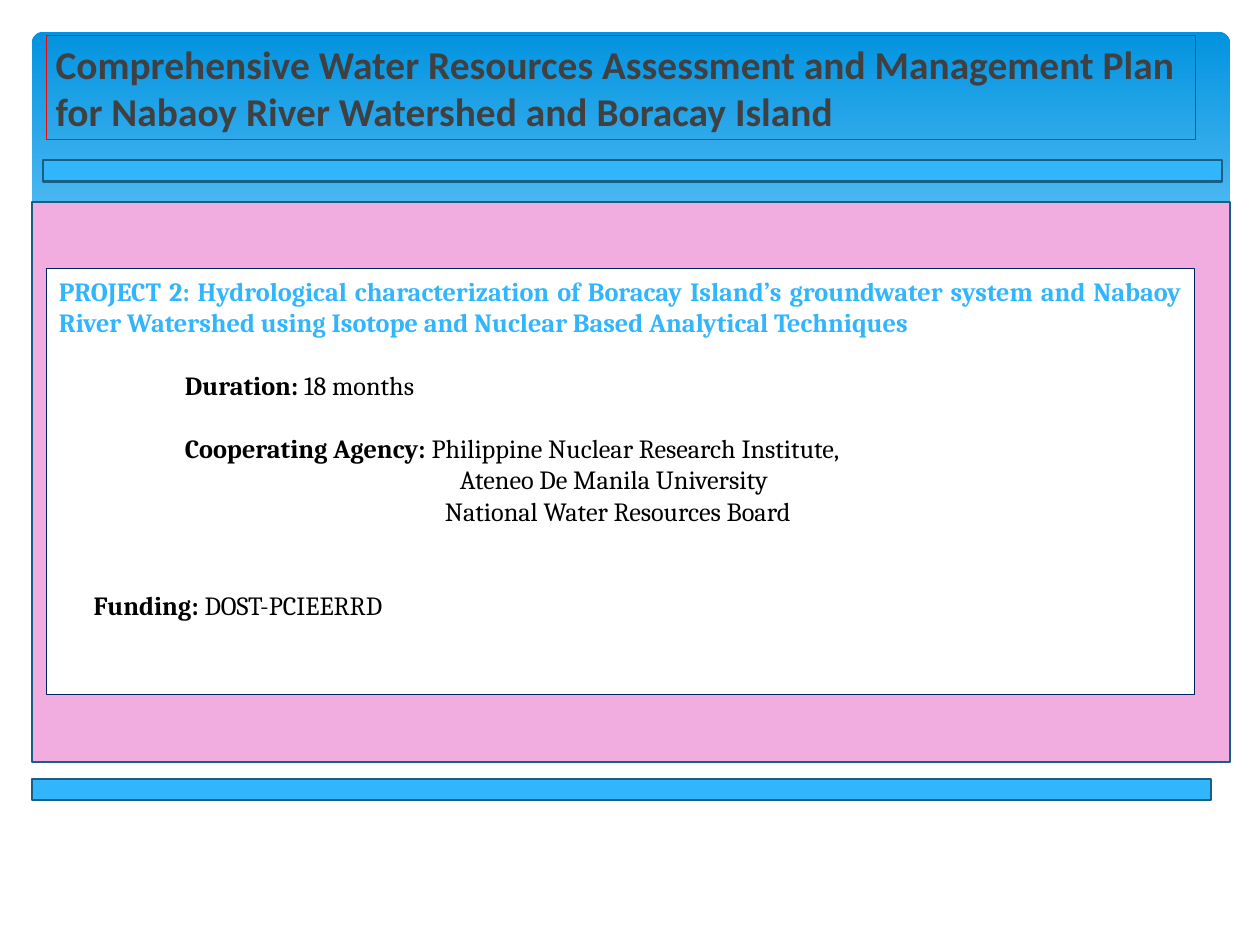
from pptx import Presentation
from pptx.dml.color import RGBColor
from pptx.enum.shapes import MSO_SHAPE
from pptx.enum.text import MSO_ANCHOR, PP_ALIGN
from pptx.util import Cm, Pt

DEEP_BLUE = RGBColor(0x02, 0x93, 0xE0)
PALE_BLUE = RGBColor(0x83, 0xD3, 0xFE)
SKY_BLUE = RGBColor(0x31, 0xB6, 0xFD)
STEEL_BLUE = RGBColor(0x19, 0x5F, 0x84)
NAVY = RGBColor(0x00, 0x20, 0x60)
PINK = RGBColor(0xF1, 0xAD, 0xDF)
RED = RGBColor(0xFF, 0x00, 0x00)
GREY = RGBColor(0x40, 0x40, 0x40)
WHITE = RGBColor(0xFF, 0xFF, 0xFF)
BLACK = RGBColor(0x00, 0x00, 0x00)

TITLE = ("Comprehensive Water Resources Assessment and Management Plan "
         "for Nabaoy River Watershed and Boracay Island")
PROJECT = ("PROJECT 2: Hydrological characterization of Boracay Island’s "
           "groundwater system and Nabaoy River Watershed using Isotope and "
           "Nuclear Based Analytical Techniques")
DETAILS = [
    (0, 0, PROJECT, "", SKY_BLUE),
    (2.54, 1, "Duration: ", "18 months", BLACK),
    (2.54, 1, "Cooperating Agency: ", "Philippine Nuclear Research Institute,", BLACK),
    (8.08, 0, "", "Ateneo De Manila University", BLACK),
    (7.78, 0, "", "National Water Resources Board", BLACK),
    (0.7, 2, "Funding: ", "DOST-PCIEERRD", BLACK),
]


class SlideBuilder:
    title_format = {"name": "Calibri", "size": Pt(22.5), "bold": True}
    detail_format = {"name": "Cambria", "size": Pt(15)}
    line_height = 17.9

    def __init__(self, slide):
        self.slide = slide

    def shape(self, kind, left, top, width, height):
        shape = self.slide.shapes.add_shape(
            kind, Cm(left), Cm(top), Cm(width), Cm(height))
        shape.shadow.inherit = False
        return shape

    def banner(self, left, top, width, height):
        banner = self.shape(MSO_SHAPE.ROUNDED_RECTANGLE, left, top, width, height)
        banner.adjustments[0] = 0.034
        banner.line.fill.background()
        banner.fill.gradient()
        banner.fill.gradient_angle = 270
        shades = [(0, DEEP_BLUE), (0.9, PALE_BLUE)]
        for stop, (position, color) in zip(banner.fill.gradient_stops, shades):
            stop.position = position
            stop.color.rgb = color

    def panel(self, left, top, width, height, fill, line, weight=1.25):
        panel = self.shape(MSO_SHAPE.RECTANGLE, left, top, width, height)
        if fill is None:
            panel.fill.background()
        else:
            panel.fill.solid()
            panel.fill.fore_color.rgb = fill
        panel.line.color.rgb = line
        panel.line.width = Pt(weight)
        return panel

    def frame(self, panel, side, edge):
        frame = panel.text_frame
        settings = {"margin_left": Cm(side), "margin_right": Cm(side),
                    "margin_top": Cm(edge), "margin_bottom": Cm(edge),
                    "word_wrap": True, "vertical_anchor": MSO_ANCHOR.TOP}
        for key, value in settings.items():
            setattr(frame, key, value)
        return frame

    def run(self, paragraph, text, color, style):
        run = paragraph.add_run()
        run.text = text
        run.font.color.rgb = color
        for key, value in style.items():
            setattr(run.font, key, value)

    def title(self, panel, text):
        paragraph = self.frame(panel, 0.18, 0.1).paragraphs[0]
        paragraph.alignment = PP_ALIGN.LEFT
        self.run(paragraph, text, GREY, self.title_format)

    def details(self, panel, rows):
        frame = self.frame(panel, 0.25, 0.13)
        for number, (indent, gap, label, value, color) in enumerate(rows):
            paragraph = frame.add_paragraph() if number else frame.paragraphs[0]
            paragraph.alignment = PP_ALIGN.JUSTIFY
            if gap:
                paragraph.space_before = Pt(gap * self.line_height)
            properties = paragraph._p.get_or_add_pPr()
            properties.set("marL", str(Cm(indent)))
            properties.set("indent", "0")
            for text, bold in ((label, True), (value, False)):
                if text:
                    self.run(paragraph, text, color, {**self.detail_format, "bold": bold})


def main():
    presentation = Presentation()
    presentation.slide_width, presentation.slide_height = Cm(25.4), Cm(19.05)
    builder = SlideBuilder(presentation.slides.add_slide(presentation.slide_layouts[6]))
    builder.banner(0.64, 0.64, 24.16, 6.86)
    builder.panel(0.64, 4.07, 24.16, 11.3, PINK, STEEL_BLUE)
    heading = builder.panel(0.94, 0.71, 23.16, 2.11, None, RED, 0.75)
    builder.title(heading, TITLE)
    project = builder.panel(0.94, 5.41, 23.14, 8.59, WHITE, NAVY, 0.75)
    builder.details(project, DETAILS)
    for left, top in ((0.64, 15.7), (0.86, 3.23)):
        builder.panel(left, top, 23.77, 0.43, SKY_BLUE, STEEL_BLUE)
    presentation.save("out.pptx")


if __name__ == "__main__":
    main()
